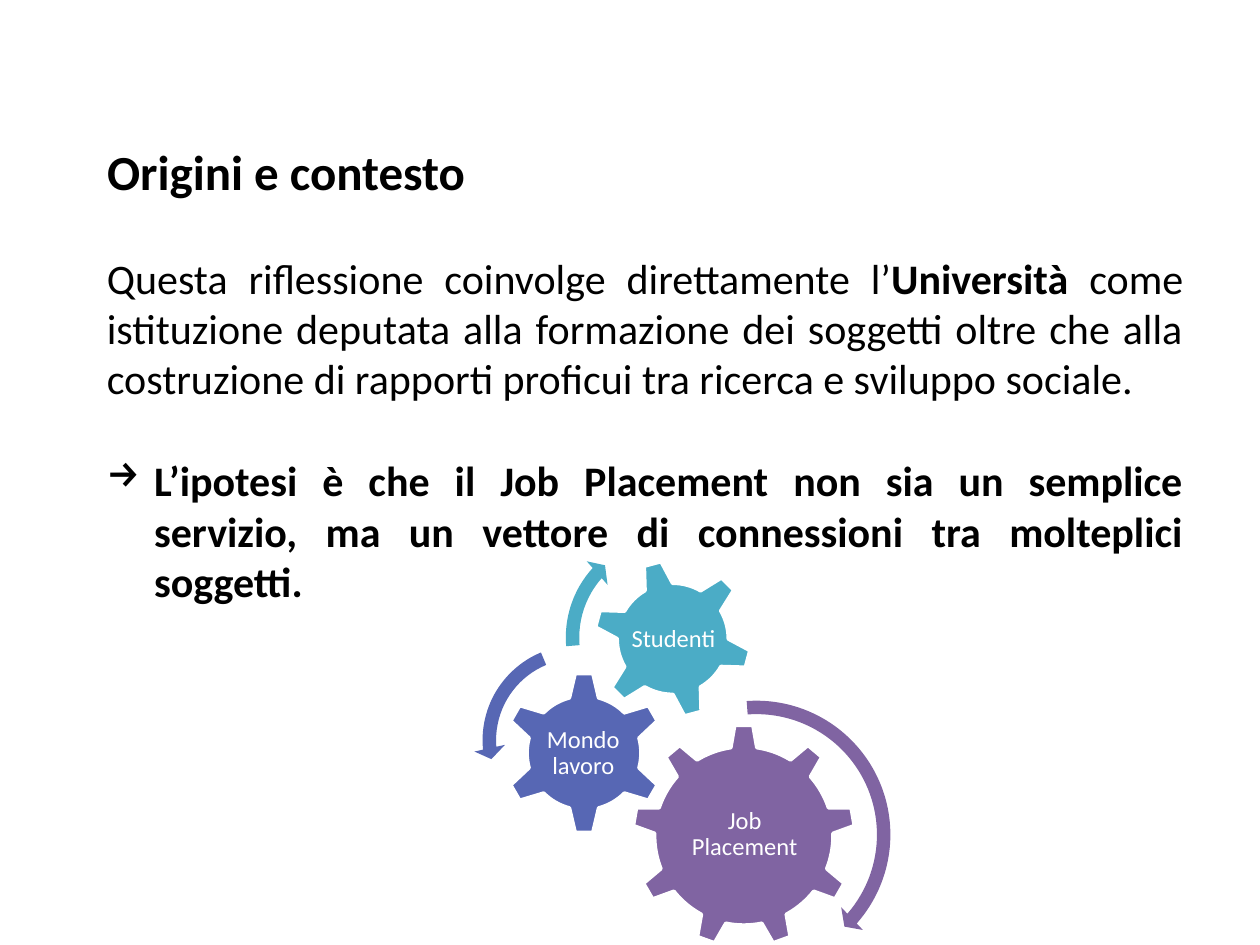
from lxml import etree
from pptx import Presentation
from pptx.dml.color import RGBColor
from pptx.enum import shapes as kinds, text as t
from pptx.oxml.ns import qn
from pptx.util import Pt

FONT = "Calibri"
BLACK = RGBColor(0x00, 0x00, 0x00)
WHITE = RGBColor(0xFF, 0xFF, 0xFF)
PURPLE = RGBColor(0x80, 0x64, 0xA2)
BLUE = RGBColor(0x57, 0x67, 0xB4)
TEAL = RGBColor(0x4B, 0xAC, 0xC6)
LEFT, WIDTH = 54, 629.3
SHAPE = kinds.MSO_SHAPE

# kind, left, top, size, rotation, colour
GEARS = [
    (SHAPE.GEAR_9, 361.4, 414, 127.4, 0, PURPLE),
    (SHAPE.GEAR_6, 287.3, 383.8, 92.9, 0, BLUE),
    (SHAPE.GEAR_6, 339.1, 319.7, 90.7, 345, TEAL),
]
# label, left, top, width, height
LABELS = [
    ("Job Placement", 387.4, 444.2, 76.3, 65.5),
    ("Mondo lavoro", 310.3, 407.5, 46.1, 46.1),
    ("Studenti", 359.3, 339.8, 51.1, 51.1),
]
# kind, left, top, size, colour, adjustments
TURNS = [
    (SHAPE.CIRCULAR_ARROW, 350.6, 395.3, 163.4, PURPLE,
     (0.047, 2.99, 24.765, 159.496, 0.055)),
    (SHAPE.LEFT_CIRCULAR_ARROW, 270.7, 363.6, 118.8, BLUE,
     (0.065, 4.3, 104.891, 148.378, 0.075)),
    (SHAPE.CIRCULAR_ARROW, 318.2, 300.2, 128.2, TEAL,
     (0.06, 3.941, 133.138, 105.082, 0.07)),
]


def add_run(paragraph, words, size, color=BLACK, bold=False):
    run = paragraph.add_run()
    run.text = words
    font = run.font
    font.name, font.size, font.bold = FONT, Pt(size), bold
    font.color.rgb = color


def set_title(slide):
    title = slide.shapes.title
    title.left, title.top = Pt(LEFT), Pt(77)
    title.width, title.height = Pt(WIDTH), Pt(41.4)
    frame = title.text_frame
    frame.auto_size = t.MSO_AUTO_SIZE.NONE
    frame.vertical_anchor = t.MSO_ANCHOR.TOP
    heading = frame.paragraphs[0]
    heading.alignment = t.PP_ALIGN.JUSTIFY
    add_run(heading, "Origini e contesto", 28, bold=True)


def add_arrow_bullet(paragraph, indent):
    props = paragraph._p.get_or_add_pPr()
    props.set("marL", str(Pt(indent)))
    props.set("indent", str(-Pt(indent)))
    etree.SubElement(props, qn("a:buChar")).set("char", "→")


def add_body(slide):
    box = slide.shapes.add_textbox(Pt(LEFT), Pt(140.5), Pt(WIDTH), Pt(212))
    frame = box.text_frame
    frame.word_wrap = True
    context = frame.paragraphs[0]
    context.alignment = t.PP_ALIGN.JUSTIFY
    add_run(context, "Questa riflessione coinvolge direttamente l’", 24)
    add_run(context, "Università ", 24, bold=True)
    add_run(context, "come istituzione deputata alla formazione dei soggetti oltre "
            "che alla costruzione di rapporti proficui tra ricerca e sviluppo "
            "sociale.", 24)
    hypothesis = frame.add_paragraph()
    add_arrow_bullet(hypothesis, 27)
    hypothesis.alignment = t.PP_ALIGN.JUSTIFY
    hypothesis.space_before = Pt(29.3)
    add_run(hypothesis, "L’ipotesi è che il Job Placement non sia un semplice "
            "servizio, ma un vettore di connessioni tra molteplici soggetti.",
            24, bold=True)


def add_round_shape(slide, kind, left, top, size, color):
    shape = slide.shapes.add_shape(kind, Pt(left), Pt(top), Pt(size), Pt(size))
    shape.shadow.inherit = False
    shape.fill.solid()
    shape.fill.fore_color.rgb = color
    return shape


def add_gear(slide, kind, left, top, size, rotation, color):
    gear = add_round_shape(slide, kind, left, top, size, color)
    gear.rotation = rotation
    gear.line.color.rgb = WHITE
    gear.line.width = Pt(2)


def add_label(slide, words, *place):
    """Upright text over a gear, so that it does not turn with it."""
    frame = slide.shapes.add_textbox(*map(Pt, place)).text_frame
    frame.word_wrap = True
    frame.vertical_anchor = t.MSO_ANCHOR.MIDDLE
    frame.margin_left = frame.margin_right = Pt(1.4)
    frame.margin_top = frame.margin_bottom = Pt(1.4)
    label = frame.paragraphs[0]
    label.alignment = t.PP_ALIGN.CENTER
    label.line_spacing = 0.9
    add_run(label, words, 14, WHITE)


def add_turn(slide, kind, left, top, size, color, adjustments):
    turn = add_round_shape(slide, kind, left, top, size, color)
    turn.line.fill.background()
    for index, value in enumerate(adjustments):
        turn.adjustments[index] = value


def main():
    deck = Presentation()
    deck.slide_width, deck.slide_height = Pt(720), Pt(540)
    slide = deck.slides.add_slide(deck.slide_layouts[5])
    set_title(slide)
    add_body(slide)
    for gear, label in zip(GEARS, LABELS):
        add_gear(slide, *gear)
        add_label(slide, *label)
    for turn in TURNS:
        add_turn(slide, *turn)
    deck.save("out.pptx")


if __name__ == "__main__":
    main()
